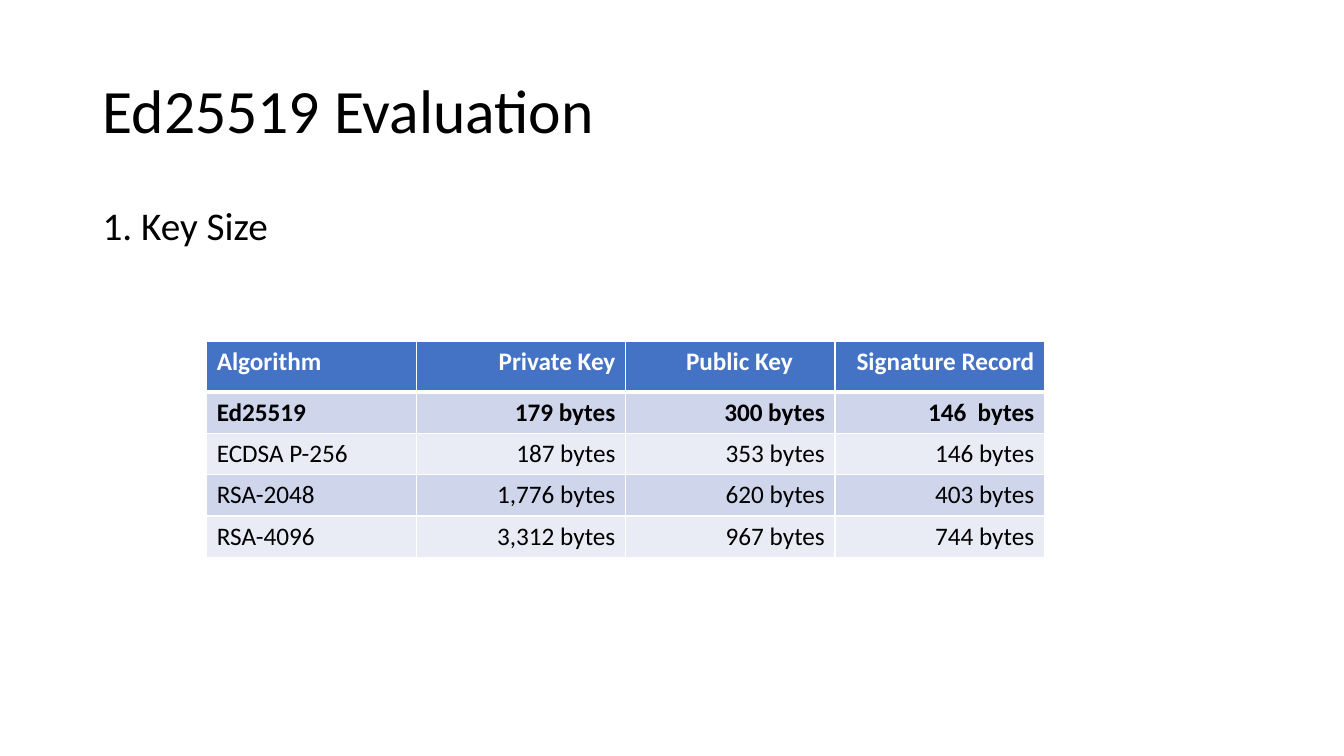
import pptx
import pptx.util
import pptx.dml.color
import pptx.enum.text
import pptx.oxml

Inches = pptx.util.Inches
Pt = pptx.util.Pt
Align = pptx.enum.text.PP_ALIGN
Anchor = pptx.enum.text.MSO_ANCHOR
DRAW = "http://schemas.openxmlformats.org/drawingml/2006/main"


def color(code):
    return pptx.dml.color.RGBColor.from_string(code)


def apply(item, values):
    for name, value in values.items():
        setattr(item, name, value)


class Deck:
    """Hold the slide and its style, and draw each kind of element."""

    font = "Calibri"
    ink = "000000"
    paper = "FFFFFF"
    head = "4472C4"
    bands = ("CFD5EA", "E9EBF5")

    def __init__(self, show):
        self.slide = show.slides.add_slide(show.slide_layouts[6])

    def label(self, frame, text, size, code, bold=False, **layout):
        par = frame.paragraphs[0]
        apply(par, layout)
        run = par.add_run()
        run.text = text
        apply(run.font, {"name": self.font, "size": Pt(size), "bold": bold})
        run.font.color.rgb = color(code)

    def text(self, box, text, size, anchor, **layout):
        frame = self.slide.shapes.add_textbox(*map(Inches, box)).text_frame
        apply(frame, {"word_wrap": True, "vertical_anchor": anchor})
        self.label(frame, text, size, self.ink, line_spacing=0.9, **layout)

    def border(self, cell, widths):
        props = cell._tc.get_or_add_tcPr()
        for place, (side, width) in enumerate(widths.items()):
            line = pptx.oxml.parse_xml(
                f'<a:ln{side} xmlns:a="{DRAW}" w="{Pt(width)}"><a:solidFill>'
                f'<a:srgbClr val="{self.paper}"/></a:solidFill></a:ln{side}>')
            props.insert(place, line)

    def table(self, box, rows, heights, bold, inset):
        shape = self.slide.shapes.add_table(
            len(rows), len(rows[0]), *map(Inches, box))
        grid = shape.table
        for row, height in zip(grid.rows, heights):
            row.height = Inches(height)
        for r, row in enumerate(rows):
            fill = self.bands[(r - 1) % 2] if r else self.head
            for c, text in enumerate(row):
                cell = grid.cell(r, c)
                cell.fill.solid()
                cell.fill.fore_color.rgb = color(fill)
                align = Align.RIGHT if c else Align.LEFT
                if (r, c) in inset:
                    align = Align.LEFT
                    cell.margin_left = Inches(inset[r, c])
                self.label(cell.text_frame, text, 18,
                           self.ink if r else self.paper,
                           r in bold, alignment=align)
                self.border(cell, {"L": 1, "R": 1, "T": 3 if r == 1 else 1,
                                   "B": 1 if r else 3})


def main():
    show = pptx.Presentation()
    apply(show, {"slide_width": Inches(13.33), "slide_height": Inches(7.5)})
    deck = Deck(show)
    deck.text((0.92, 0.4, 11.5, 1.45), "Ed25519 Evaluation", 44, Anchor.MIDDLE)
    deck.text((0.92, 2, 11.5, 1.24), "1. Key Size", 28, Anchor.TOP,
              space_before=Pt(10))
    rows = [
        ("Algorithm", "Private Key", "Public Key", "Signature Record"),
        ("Ed25519", "179 bytes", "300 bytes", "146  bytes"),
        ("ECDSA P-256", "187 bytes", "353 bytes", "146 bytes"),
        ("RSA-2048", "1,776 bytes", "620 bytes", "403 bytes"),
        ("RSA-4096", "3,312 bytes", "967 bytes", "744 bytes"),
    ]
    deck.table((2.05, 3.39, 8.31, 2.12), rows, [0.5] + [0.41] * 4,
               bold={0, 1}, inset={(0, 2): 0.6})
    show.save("out.pptx")


if __name__ == "__main__":
    main()
